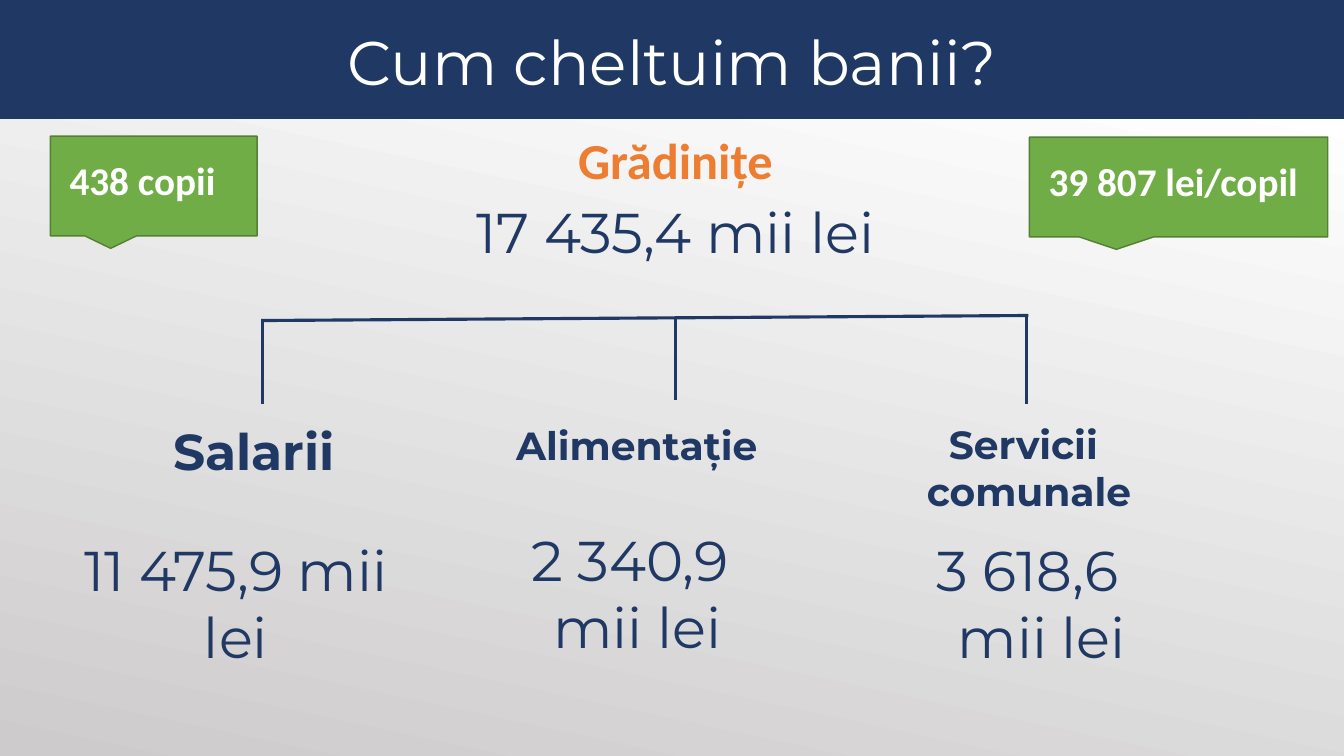
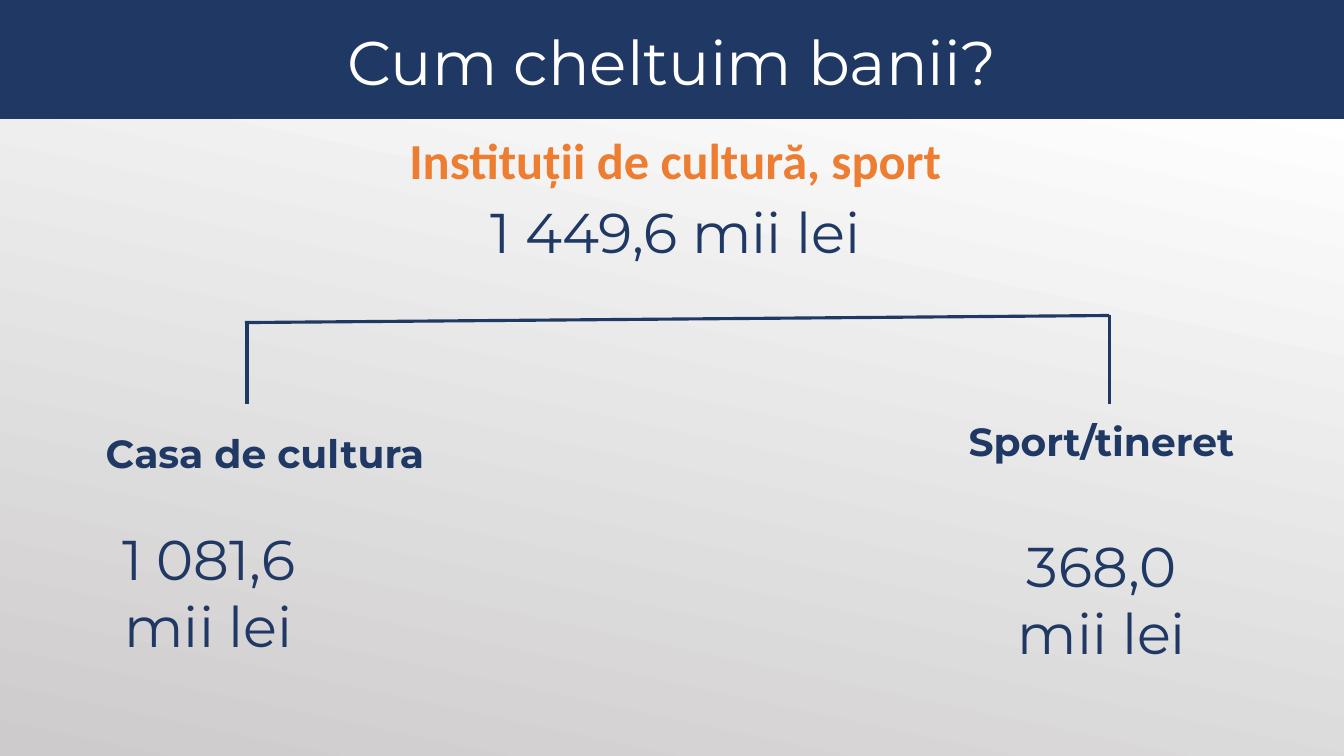
import dataclasses

import pptx
import pptx.dml.color
import pptx.enum.shapes
import pptx.enum.text
import pptx.oxml.ns
import pptx.util
from lxml import etree

SCALE = 9144
SHAPES = pptx.enum.shapes.MSO_SHAPE
ALIGN = pptx.enum.text.PP_ALIGN
ANCHOR = pptx.enum.text.MSO_ANCHOR


@dataclasses.dataclass(frozen=True)
class Theme:
    """Colours, type styles and shared sizes of the presentation."""
    width: int = 1333
    height: int = 750
    band_height: int = 118
    navy: str = "203864"
    green: str = "70AD47"
    green_edge: str = "538035"
    backdrop: tuple = ((0.1, "FFFFFF"), (1, "CDCBCB"))
    backdrop_angle: int = 258
    rule: float = 2.25
    edge: float = 1
    styles: dict = dataclasses.field(default_factory=lambda: {
        "title": {"name": "Montserrat", "size": 44, "bold": False, "color": "FFFFFF"},
        "topic": {"name": "Calibri", "size": 36, "bold": True, "color": "ED7D31"},
        "amount": {"name": "Montserrat", "size": 40, "bold": False, "color": "203864"},
        "large heading": {"name": "Montserrat", "size": 36, "bold": True, "color": "203864"},
        "heading": {"name": "Montserrat", "size": 28, "bold": True, "color": "203864"},
        "callout": {"name": "Calibri", "size": 28, "bold": True, "color": "FFFFFF"},
    })


THEME = Theme()
TITLE = "Cum cheltuim banii?"

SPENDING = [
    {
        "topic": "Grădinițe",
        "total": "17 435,4 mii lei",
        "crossbar": (259, 318, 1020, 313),
        "branches": [
            {"stem": (260, 318, 401), "heading": ["Salarii"], "style": "large heading",
             "heading_box": (162, 412, 197, 71), "align": ALIGN.LEFT,
             "amount": ["11 475,9 mii lei"], "amount_at": (47, 526)},
            {"stem": (670, 315, 397), "heading": ["Alimentație"], "style": "heading",
             "heading_box": (502, 413, 318, 57), "align": ALIGN.LEFT,
             "amount": ["2 340,9 ", "mii lei"], "amount_at": (445, 516)},
            {"stem": (1018, 313, 401), "heading": ["Servicii ", "comunale"], "style": "heading",
             "heading_box": (859, 412, 323, 104), "align": ALIGN.CENTER,
             "amount": ["3 618,6 ", " mii lei"], "amount_at": (839, 526)},
        ],
        "callouts": [("438 copii", (50, 135, 205, 99)),
                     ("39 807 lei/copil", (1021, 136, 296, 99))],
    },
    {
        "topic": "Instituții de cultură, sport",
        "total": "1 449,6 mii lei",
        "crossbar": (243, 320, 1100, 313),
        "branches": [
            {"stem": (245, 318, 401), "heading": ["Casa de cultura"], "style": "heading",
             "heading_box": (95, 421, 359, 57), "align": ALIGN.LEFT,
             "amount": ["1 081,6", "mii lei"], "amount_at": (20, 515)},
            {"stem": (1100, 313, 401), "heading": ["Sport/tineret"], "style": "heading",
             "heading_box": (931, 409, 323, 57), "align": ALIGN.CENTER,
             "amount": ["368,0", "mii lei"], "amount_at": (906, 522)},
        ],
        "callouts": [],
    },
]


def px(*lengths):
    """Turn px lengths into a list of EMU."""
    return [pptx.util.Emu(length * SCALE) for length in lengths]


def rgb(code):
    """Return the colour for a hex code."""
    return pptx.dml.color.RGBColor.from_string(code)


def write(frame, lines, style, align=ALIGN.CENTER, spacing=None):
    """Write one paragraph per line in a named type style."""
    frame.word_wrap = True
    look = THEME.styles[style]
    formats = {"name": look["name"], "size": pptx.util.Pt(look["size"]), "bold": look["bold"]}
    for index, line in enumerate(lines):
        paragraph = frame.paragraphs[0] if index == 0 else frame.add_paragraph()
        paragraph.alignment = align
        paragraph.line_spacing = spacing
        run = paragraph.add_run()
        run.text = line
        for attribute, value in formats.items():
            setattr(run.font, attribute, value)
        run.font.color.rgb = rgb(look["color"])


def add_text(slide, box, lines, style, **layout):
    """Place a text box and return its frame."""
    frame = slide.shapes.add_textbox(*px(*box)).text_frame
    write(frame, lines, style, **layout)
    return frame


def add_panel(slide, preset, box, fill, edge=None):
    """Place a flat filled shape with an optional outline."""
    panel = slide.shapes.add_shape(preset, *px(*box))
    panel.shadow.inherit = False
    panel.fill.solid()
    panel.fill.fore_color.rgb = rgb(fill)
    if edge:
        panel.line.color.rgb = rgb(edge)
        panel.line.width = pptx.util.Pt(THEME.edge)
    else:
        panel.line.fill.background()
    return panel


def add_rule(slide, *ends):
    """Draw a navy straight line between two points."""
    rule = slide.shapes.add_connector(pptx.enum.shapes.MSO_CONNECTOR.STRAIGHT, *px(*ends))
    rule.line.color.rgb = rgb(THEME.navy)
    rule.line.width = pptx.util.Pt(THEME.rule)
    etree.SubElement(rule._element.spPr, pptx.oxml.ns.qn("a:effectLst"))


def add_backdrop(slide):
    """Fill the slide background with the shared gradient."""
    fill = slide.background.fill
    fill.gradient()
    fill.gradient_angle = THEME.backdrop_angle
    for stop, (position, color) in zip(fill.gradient_stops, THEME.backdrop):
        stop.position = position
        stop.color.rgb = rgb(color)


def add_title_band(slide, box):
    """Place the navy band with the shared title inside the box."""
    left, top, width, height = box
    add_panel(slide, SHAPES.RECTANGLE, box, THEME.navy)
    frame = add_text(slide, (left + 17, top + 25, width - 33, height - 37),
                     [TITLE], "title", spacing=0.9)
    frame.vertical_anchor = ANCHOR.MIDDLE


def add_summary(slide, box, topic, total):
    """Place the topic and its total below each other in the box."""
    left, top, width, height = box
    add_text(slide, (left, top, width, 71), [topic], "topic")
    add_text(slide, (left + 297, top + 68, 700, height - 68), [total], "amount")


def add_branch(slide, branch):
    """Place one stem with its heading and amount."""
    x, top, bottom = branch["stem"]
    add_rule(slide, x, top, x, bottom)
    add_text(slide, branch["heading_box"], branch["heading"], branch["style"],
             align=branch["align"])
    add_text(slide, (*branch["amount_at"], 374, 145), branch["amount"], "amount")


def add_callout(slide, label, box):
    """Place a green callout holding its label."""
    callout = add_panel(slide, SHAPES.RECTANGULAR_CALLOUT, box, THEME.green, THEME.green_edge)
    frame = callout.text_frame
    margins = {"margin_left": 19, "margin_top": 5, "margin_right": 10, "margin_bottom": 17}
    for attribute, length in margins.items():
        setattr(frame, attribute, px(length)[0])
    frame.vertical_anchor = ANCHOR.MIDDLE
    write(frame, [label], "callout", align=ALIGN.LEFT)


def add_spending_slide(deck, spending):
    """Build one slide that splits a total into branches."""
    slide = deck.slides.add_slide(deck.slide_layouts[6])
    add_backdrop(slide)
    add_title_band(slide, (0, 0, THEME.width, THEME.band_height))
    add_summary(slide, (23, 123, 1294, 145), spending["topic"], spending["total"])
    add_rule(slide, *spending["crossbar"])
    for branch in spending["branches"]:
        add_branch(slide, branch)
    for label, box in spending["callouts"]:
        add_callout(slide, label, box)


def main():
    """Build and save the presentation."""
    deck = pptx.Presentation()
    deck.slide_width, deck.slide_height = px(THEME.width, THEME.height)
    for spending in SPENDING:
        add_spending_slide(deck, spending)
    deck.save("out.pptx")


if __name__ == "__main__":
    main()
